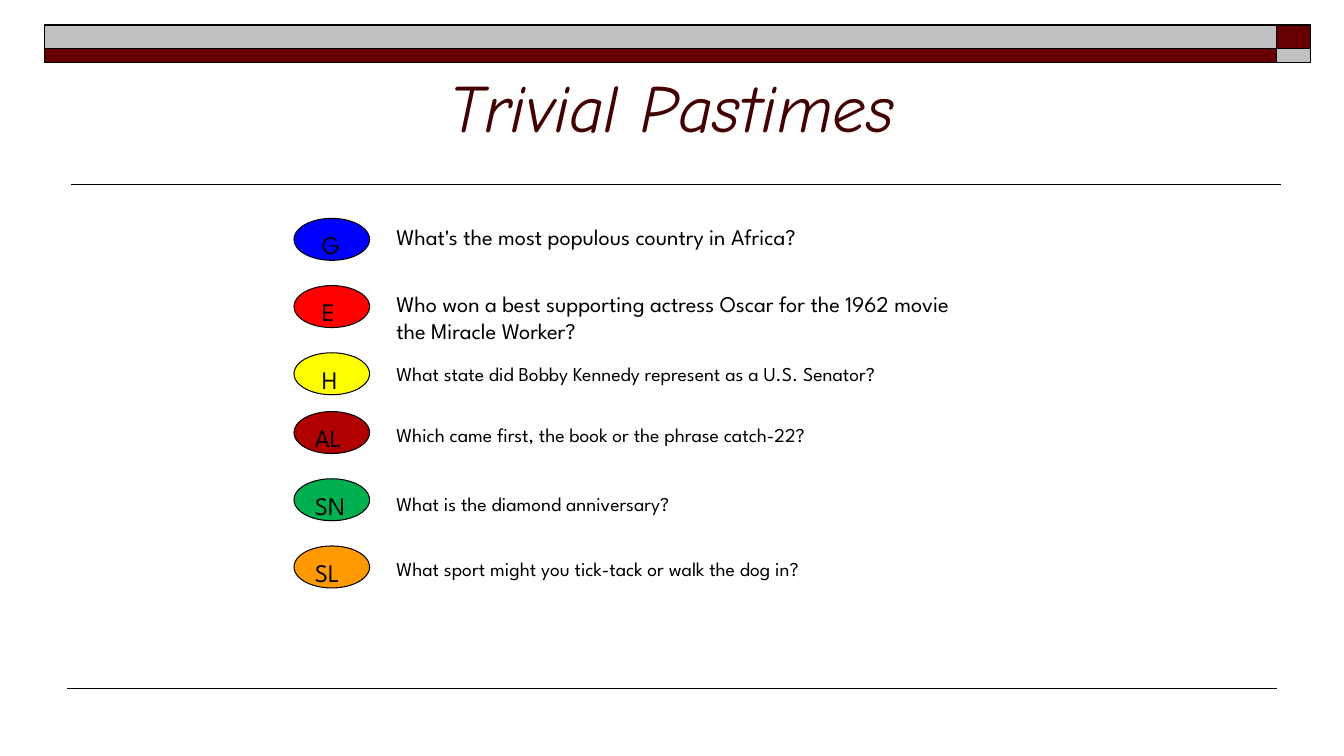
from dataclasses import dataclass
from lxml.etree import SubElement
from pptx import Presentation
from pptx.dml.color import RGBColor
from pptx.enum.shapes import MSO_CONNECTOR, MSO_SHAPE
from pptx.enum.text import MSO_ANCHOR, MSO_AUTO_SIZE, PP_ALIGN
from pptx.oxml.ns import qn
from pptx.util import Pt


# Colours, fonts and type sizes
@dataclass(frozen=True)
class Theme:
    ink: str = "000000"
    wine: str = "660000"
    gray: str = "C0C0C0"
    title: str = "420000"
    head: str = "Comic Neue"
    body: str = "League Spartan"
    big: int = 48
    mark: int = 18
    large: int = 16
    small: int = 14


def apply(item, values):
    for name, value in values.items():
        setattr(item, name, value)


class Board:
    def __init__(self, slide, theme):
        self.slide = slide
        self.theme = theme

    def letter(self, shape, text, font, frame, align=PP_ALIGN.LEFT):
        box = shape.text_frame
        apply(box, {"word_wrap": True, **frame})
        para = box.paragraphs[0]
        para.text = text
        para.alignment = align
        color = font.pop("color", self.theme.ink)
        apply(para.font, {"name": self.theme.body, **font})
        para.font.color.rgb = RGBColor.from_string(color)

    def title(self, text, left, top, width, height):
        shape = self.slide.shapes.title
        apply(shape, {"left": Pt(left), "top": Pt(top),
                      "width": Pt(width), "height": Pt(height)})
        theme = self.theme
        font = {"name": theme.head, "size": Pt(theme.big),
                "italic": True, "color": theme.title}
        frame = {"vertical_anchor": MSO_ANCHOR.BOTTOM,
                 "auto_size": MSO_AUTO_SIZE.NONE}
        self.letter(shape, text, font, frame, PP_ALIGN.CENTER)

    def shape(self, kind, left, top, width, height, fill, weight):
        shape = self.slide.shapes.add_shape(
            kind, Pt(left), Pt(top), Pt(width), Pt(height))
        shape.shadow.inherit = False
        shape.fill.solid()
        shape.fill.fore_color.rgb = RGBColor.from_string(fill)
        self.stroke(shape, weight)
        return shape

    def stroke(self, shape, weight):
        shape.line.color.rgb = RGBColor.from_string(self.theme.ink)
        shape.line.width = Pt(weight)

    def rule(self, start, end, top, weight):
        line = self.slide.shapes.add_connector(
            MSO_CONNECTOR.STRAIGHT, Pt(start), Pt(top), Pt(end), Pt(top))
        self.stroke(line, weight)
        SubElement(line._element.spPr, qn("a:effectLst"))

    def badge(self, text, left, top, fill):
        shape = self.shape(MSO_SHAPE.OVAL, left, top, 54, 30, fill, 0.75)
        inset = 12 if len(text) == 1 else 7.2
        frame = {"vertical_anchor": MSO_ANCHOR.TOP, "margin_left": Pt(inset)}
        self.letter(shape, text, {"size": Pt(self.theme.mark)}, frame)

    def label(self, text, left, top, width, height, size):
        box = self.slide.shapes.add_textbox(
            Pt(left), Pt(top), Pt(width), Pt(height))
        frame = {"auto_size": MSO_AUTO_SIZE.SHAPE_TO_FIT_TEXT}
        self.letter(box, text, {"size": Pt(size)}, frame)


def main():
    deck = Presentation()
    apply(deck, {"slide_width": Pt(960), "slide_height": Pt(540)})
    theme = Theme()
    board = Board(deck.slides.add_slide(deck.slide_layouts[5]), theme)

    # Banner: two rows of a long bar and a short end, colours swapped
    rows = [(18, 16.5, theme.gray, theme.wine),
            (34.5, 10, theme.wine, theme.gray)]
    for top, height, main_fill, end_fill in rows:
        for left, width, fill in [(32, 880, main_fill), (912, 24, end_fill)]:
            board.shape(MSO_SHAPE.RECTANGLE, left, top, width, height, fill, 1)

    # Title and rules
    board.title("Trivial Pastimes", 156, 18, 648, 90)
    board.rule(50.5, 915, 132, 1)
    board.rule(48, 912, 492, 0.75)

    # Questions: badge, fill, badge top, text top, width, height, size, text
    large, small = theme.large, theme.small
    items = [
        ("G", "0000FF", 156, 156, 444, 26.5, large,
         "What's the most populous country in Africa?"),
        ("E", "FF0000", 204, 204, 426, 46, large,
         "Who won a best supporting actress Oscar for the 1962 movie "
         "the Miracle Worker?"),
        ("H", "FFFF00", 252, 255, 432, 24.5, small,
         "What state did Bobby Kennedy represent as a U.S. Senator?"),
        ("AL", "B10000", 294, 298.5, 510, 24.5, small,
         "Which came first, the book or the phrase catch-22?"),
        ("SN", "00B050", 342, 348, 468, 24.5, small,
         "What is the diamond anniversary?"),
        ("SL", "FF9900", 390, 394.5, 516, 24.5, small,
         "What sport might you tick-tack or walk the dog in?"),
    ]
    for mark, fill, top, text_top, width, height, size, text in items:
        board.badge(mark, 210, top, fill)
        board.label(text, 276, text_top, width, height, size)

    deck.save("out.pptx")


if __name__ == "__main__":
    main()
